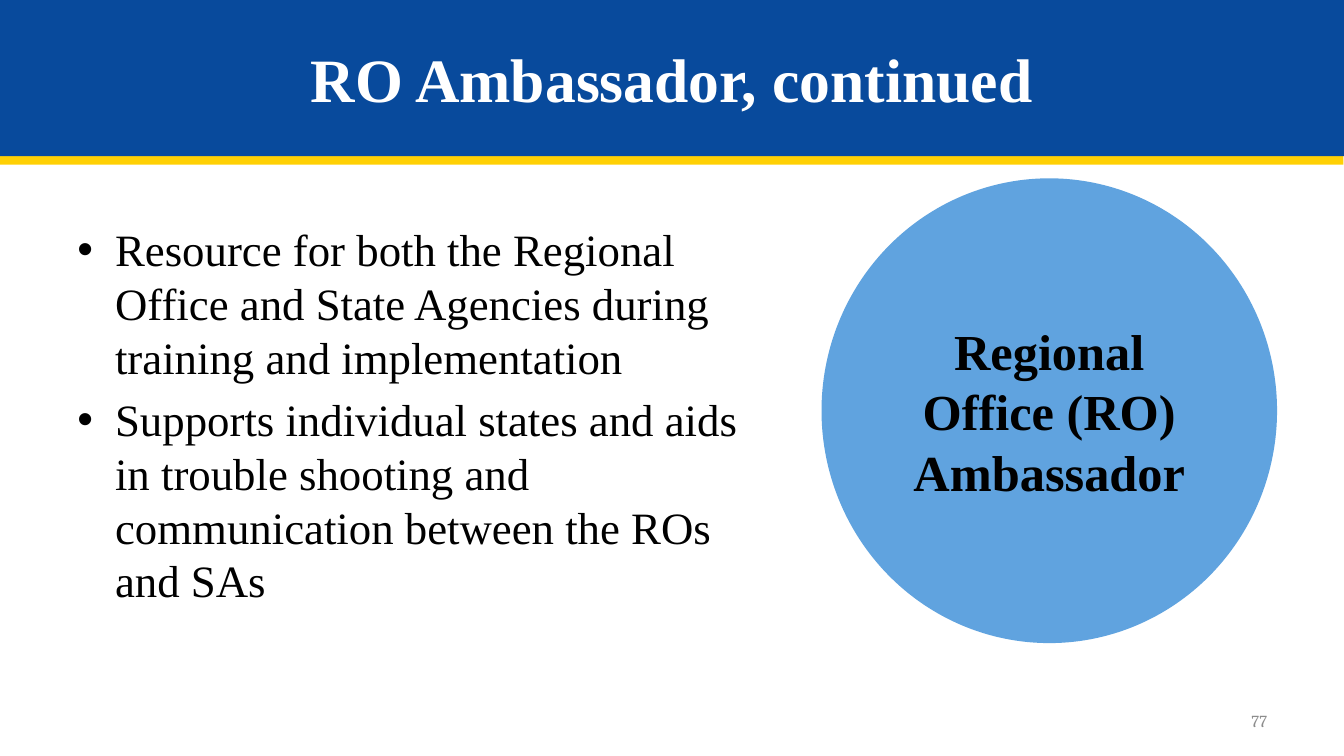
"""Build the RO Ambassador slide."""
import pptx
import pptx.util
import pptx.dml.color
import pptx.enum.shapes
import pptx.enum.text
import lxml.etree

Pt = pptx.util.Pt
RGBColor = pptx.dml.color.RGBColor
ALIGN = pptx.enum.text.PP_ALIGN
NS = "http://schemas.openxmlformats.org/drawingml/2006/main"

TITLE = "RO Ambassador, continued"
BULLETS = [
    "Resource for both the Regional Office and State Agencies during training and implementation",
    "Supports individual states and aids in trouble shooting and communication between the ROs and SAs",
]
CIRCLE_LINES = ["Regional Office (RO)", "Ambassador"]
PAGE = "77"

BLUE = RGBColor(0x08, 0x4A, 0x9C)
SKY = RGBColor(0x60, 0xA3, 0xDF)
GOLD = RGBColor(0xFF, 0xD0, 0x04)
GRAY = RGBColor(0x8C, 0x8C, 0x8C)
WHITE = RGBColor(0xFF, 0xFF, 0xFF)
BLACK = RGBColor(0, 0, 0)
SERIF = "Times New Roman"


def place(sp, left, top, width, height):
    sp.left, sp.top, sp.width, sp.height = Pt(left), Pt(top), Pt(width), Pt(height)


def setup(sp):
    tf = sp.text_frame
    tf.word_wrap = True
    tf.auto_size = pptx.enum.text.MSO_AUTO_SIZE.NONE
    tf.vertical_anchor = pptx.enum.text.MSO_ANCHOR.MIDDLE
    return tf


def add_run(p, text, size, color, bold=False, font=SERIF):
    r = p.add_run()
    r.text = text
    r.font.name, r.font.size, r.font.bold = font, Pt(size), bold
    r.font.color.rgb = color


def add_gold_edge(sp):
    effects = lxml.etree.SubElement(sp._element.spPr, f"{{{NS}}}effectLst")
    shadow = lxml.etree.SubElement(effects, f"{{{NS}}}outerShdw", blurRad="0",
                                   dist=str(Pt(6)), dir="5640000", algn="t", rotWithShape="0")
    lxml.etree.SubElement(shadow, f"{{{NS}}}srgbClr", val=str(GOLD))


def add_bullet(p):
    pPr = p._p.get_or_add_pPr()
    pPr.set("marL", str(Pt(27)))
    pPr.set("indent", str(Pt(-27)))
    lxml.etree.SubElement(pPr, f"{{{NS}}}buFont", typeface="Arial")
    lxml.etree.SubElement(pPr, f"{{{NS}}}buChar", char="•")


def main():
    prs = pptx.Presentation()
    prs.slide_width, prs.slide_height = Pt(960), Pt(540)
    s = prs.slides.add_slide(prs.slide_layouts[1])

    title = s.shapes.title
    place(title, 0, 0, 960, 111.6)
    title.fill.solid()
    title.fill.fore_color.rgb = BLUE
    add_gold_edge(title)
    p = setup(title).paragraphs[0]
    p.alignment = ALIGN.CENTER
    add_run(p, TITLE, 44, WHITE, True)

    body = s.placeholders[1]
    place(body, 48, 144, 517, 338.4)
    tf = setup(body)
    tf.margin_bottom = Pt(38)
    for i, text in enumerate(BULLETS):
        p = tf.add_paragraph() if i else tf.paragraphs[0]
        add_bullet(p)
        p.space_before = Pt(6 if i else 0)
        add_run(p, text, 32, BLACK)

    number = s.shapes.add_textbox(Pt(688.3), Pt(500.4), Pt(224), Pt(28.8))
    p = setup(number).paragraphs[0]
    p.alignment = ALIGN.RIGHT
    add_run(p, PAGE, 12, GRAY, font="Cambria")

    circle = s.shapes.add_shape(pptx.enum.shapes.MSO_SHAPE.FLOWCHART_CONNECTOR,
                                Pt(586.8), Pt(127.4), Pt(325.4), Pt(332))
    circle.shadow.inherit = False
    circle.fill.solid()
    circle.fill.fore_color.rgb = SKY
    circle.line.fill.background()
    p = setup(circle).paragraphs[0]
    p.alignment = ALIGN.CENTER
    for i, text in enumerate(CIRCLE_LINES):
        if i:
            p.add_line_break()
        add_run(p, text, 36, BLACK, True)

    prs.save("out.pptx")


if __name__ == "__main__":
    main()
